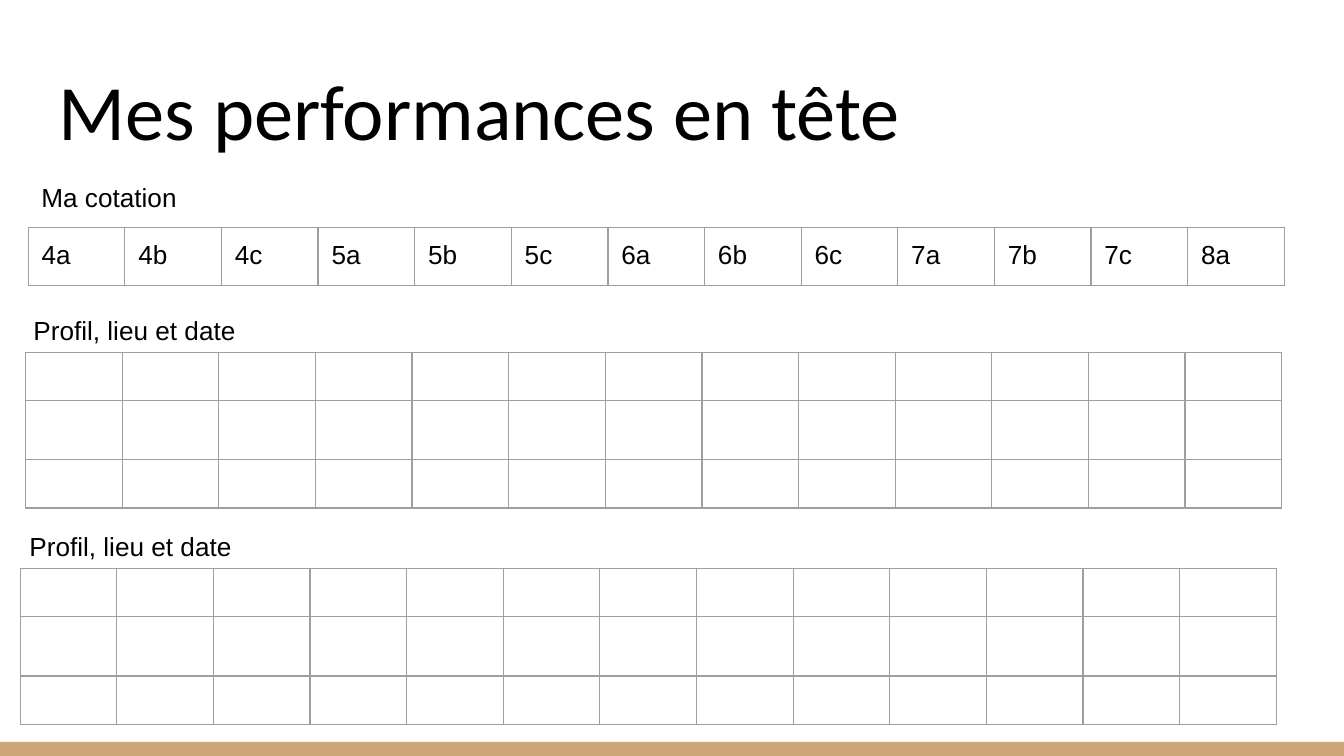
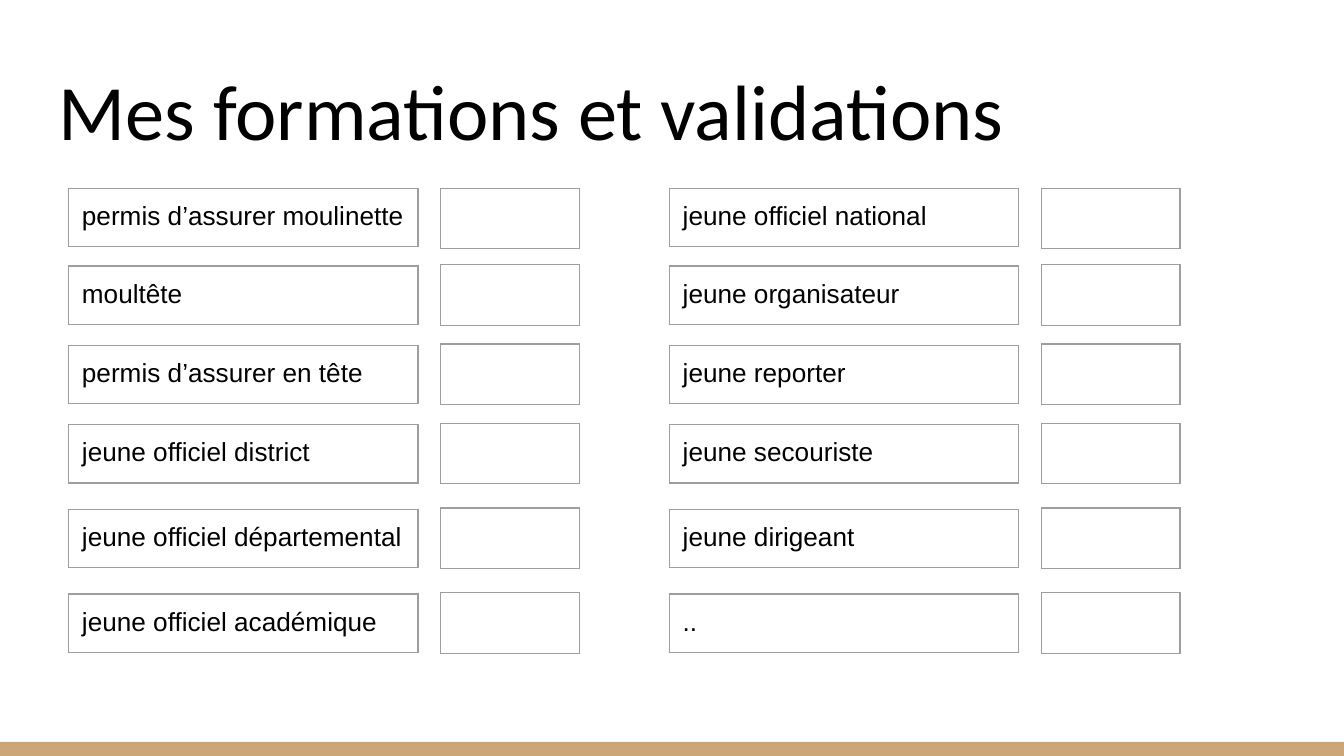
from lxml.etree import SubElement
from pptx import Presentation
from pptx.dml.color import RGBColor
from pptx.enum.shapes import MSO_SHAPE
from pptx.enum.text import MSO_ANCHOR
from pptx.oxml.ns import qn
from pptx.util import Inches, Pt

# Content
PERFORMANCE_TITLE = "Mes performances en tête"
TRAINING_TITLE = "Mes formations et validations"
GRADES = ["4a", "4b", "4c", "5a", "5b", "5c", "6a", "6b", "6c", "7a", "7b", "7c", "8a"]
EMPTY_GRID = [[""] * len(GRADES) for _ in range(3)]
# Label, its place, the rows below it, their place and their heights
PERFORMANCE_BLOCKS = [
    ("Ma cotation", (0.21, 1.25, 2.33, 0.26), [GRADES], (0.21, 1.69), [0.42]),
    ("Profil, lieu et date", (0.15, 2.24, 4.42, 0.32), EMPTY_GRID, (0.19, 2.62), [0.36, 0.44, 0.36]),
    ("Profil, lieu et date", (0.12, 3.85, 4.42, 0.32), EMPTY_GRID, (0.15, 4.23), [0.36, 0.44, 0.36]),
]
TRAININGS = [
    ["permis d’assurer moulinette", "moultête", "permis d’assurer en tête",
     "jeune officiel district", "jeune officiel départemental", "jeune officiel académique"],
    ["jeune officiel national", "jeune organisateur", "jeune reporter",
     "jeune secouriste", "jeune dirigeant", ".."],
]

# Shared look
WIDTH = 10
HEIGHT = WIDTH * 9 / 16
BAND_TOP = 5.52
BACKGROUND, BAND, BORDER, INK = "FFFFFF", "CCA677", "9E9E9E", "000000"
TITLE_FONT = {"name": "Calibri", "size": Pt(42)}
BODY_FONT = {"name": "Arial", "size": Pt(14)}
INSET = Inches(0.1)

# Layout rules
GRADE_WIDTH = 9.35 / len(GRADES)
TRAINING_LEFT, TRAINING_PITCH = 0.51, 4.47
TRAINING_TOPS = [1.4, 1.98, 2.57, 3.16, 3.79, 4.42]
NAME_WIDTH, NAME_HEIGHT = 2.6, 0.42
CHECK_OFFSET, CHECK_WIDTH, CHECK_HEIGHT = 2.77, 1.03, 0.45


def color(value):
    return RGBColor.from_string(value)


def write(text_frame, text, font_values):
    run = text_frame.paragraphs[0].add_run()
    run.text = text
    for name, value in font_values.items():
        setattr(run.font, name, value)
    run.font.color.rgb = color(INK)


def add_text(slide, text, place, font_values, anchor=MSO_ANCHOR.TOP):
    text_frame = slide.shapes.add_textbox(*map(Inches, place)).text_frame
    frame_values = {"word_wrap": True, "vertical_anchor": anchor}
    frame_values.update({f"margin_{side}": INSET for side in ("left", "right", "top", "bottom")})
    for name, value in frame_values.items():
        setattr(text_frame, name, value)
    write(text_frame, text, font_values)


def draw_borders(cell):
    properties = cell._tc.get_or_add_tcPr()
    for position, side in enumerate(("lnL", "lnR", "lnT", "lnB")):
        line = SubElement(properties, qn(f"a:{side}"), w=str(Pt(0.75)))
        fill = SubElement(line, qn("a:solidFill"))
        SubElement(fill, qn("a:srgbClr"), val=BORDER)
        properties.insert(position, line)


def add_grid(slide, rows, left, top, column_width, row_heights):
    columns = len(rows[0])
    table = slide.shapes.add_table(
        len(rows), columns, Inches(left), Inches(top),
        Inches(column_width * columns), Inches(sum(row_heights))).table
    table.first_row = table.horz_banding = False
    for column in table.columns:
        column.width = Inches(column_width)
    for row, height, texts in zip(table.rows, row_heights, rows):
        row.height = Inches(height)
        for cell, text in zip(row.cells, texts):
            cell.fill.background()
            draw_borders(cell)
            cell.margin_left = cell.margin_right = INSET
            # Empty cells drop the vertical margins so that rows keep their height
            cell.margin_top = cell.margin_bottom = INSET if text else 0
            if text:
                write(cell.text_frame, text, BODY_FONT)


def add_slide(presentation, title):
    slide = presentation.slides.add_slide(presentation.slide_layouts[6])
    slide.background.fill.solid()
    slide.background.fill.fore_color.rgb = color(BACKGROUND)
    band = slide.shapes.add_shape(
        MSO_SHAPE.RECTANGLE, 0, Inches(BAND_TOP), Inches(WIDTH), Inches(HEIGHT - BAND_TOP))
    band.shadow.inherit = False
    band.fill.solid()
    band.fill.fore_color.rgb = color(BAND)
    band.line.fill.background()
    add_text(slide, title, (0.34, 0.35, 9.32, 0.91), TITLE_FONT, MSO_ANCHOR.BOTTOM)
    return slide


def build_performances(presentation):
    slide = add_slide(presentation, PERFORMANCE_TITLE)
    for label, label_place, rows, (left, top), heights in PERFORMANCE_BLOCKS:
        add_grid(slide, rows, left, top, GRADE_WIDTH, heights)
        add_text(slide, label, label_place, BODY_FONT)


def build_trainings(presentation):
    slide = add_slide(presentation, TRAINING_TITLE)
    for group, names in enumerate(TRAININGS):
        left = TRAINING_LEFT + group * TRAINING_PITCH
        for index, (name, top) in enumerate(zip(names, TRAINING_TOPS)):
            check_top = top - 0.01 if index else top
            add_grid(slide, [[name]], left, top, NAME_WIDTH, [NAME_HEIGHT])
            add_grid(slide, [[""]], left + CHECK_OFFSET, check_top, CHECK_WIDTH, [CHECK_HEIGHT])


def main():
    presentation = Presentation()
    presentation.slide_width = Inches(WIDTH)
    presentation.slide_height = Inches(HEIGHT)
    build_performances(presentation)
    build_trainings(presentation)
    presentation.save("out.pptx")


if __name__ == "__main__":
    main()
